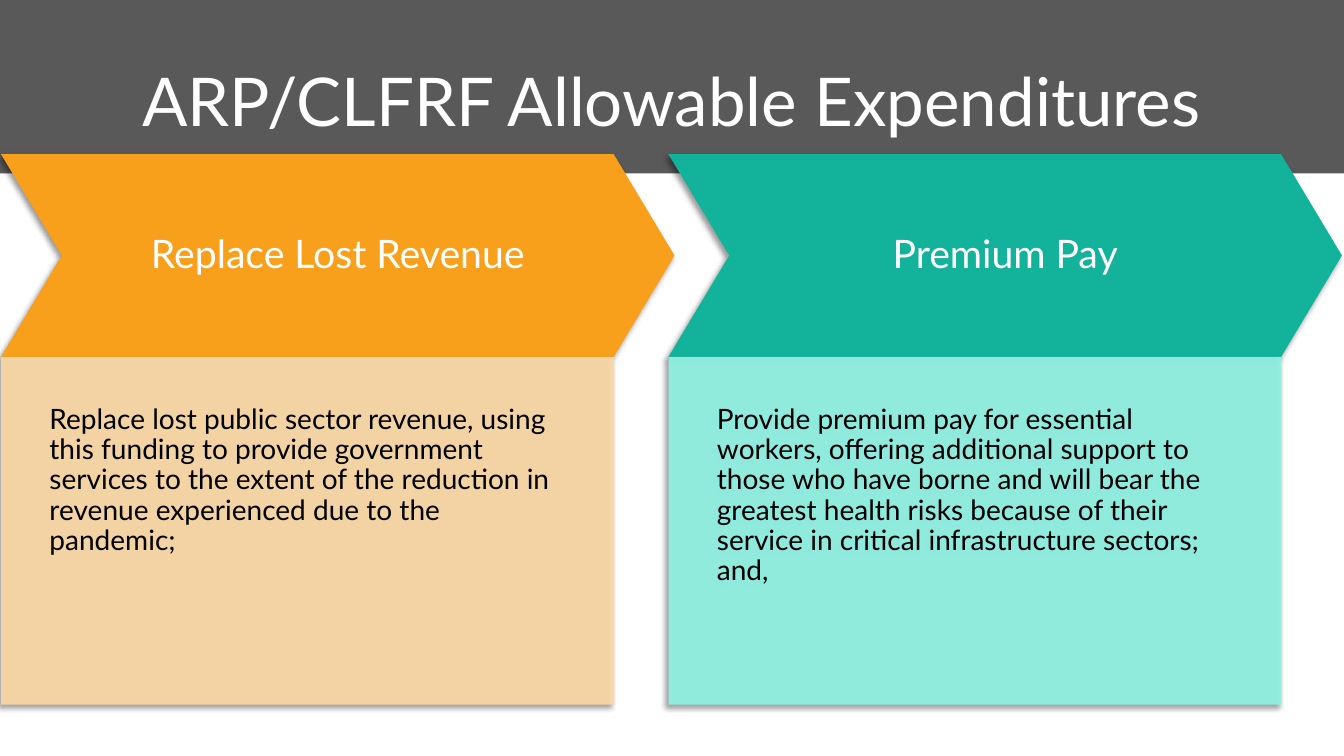
import pptx
import pptx.dml.color
import pptx.enum.shapes
import pptx.enum.text
import pptx.oxml
import pptx.oxml.ns
import pptx.util

SHAPE = pptx.enum.shapes.MSO_SHAPE
ALIGN = pptx.enum.text.PP_ALIGN
ANCHOR = pptx.enum.text.MSO_ANCHOR

EXPENDITURES = [
    ("Replace Lost Revenue", "F8A01B", "FCD9A4",
     "Replace lost public sector revenue, using this funding to provide "
     "government services to the extent of the reduction in revenue "
     "experienced due to the pandemic;"),
    ("Premium Pay", "13B39B", "8EF3E4",
     "Provide premium pay for essential workers, offering additional support "
     "to those who have borne and will bear the greatest health risks because "
     "of their service in critical infrastructure sectors; and,"),
]

SHADOW = (
    f'<a:effectLst {pptx.oxml.ns.nsdecls("a")}>'
    '<a:outerShdw blurRad="50800" dist="38100" dir="8100000" algn="tr" rotWithShape="0">'
    '<a:srgbClr val="000000"><a:alpha val="40000"/></a:srgbClr>'
    '</a:outerShdw></a:effectLst>'
)


def rgb(value):
    return pptx.dml.color.RGBColor.from_string(value)


class SlideBuilder:
    """Places elements on a slide; lengths are percentages of its size."""

    font = "Lato"

    def __init__(self, deck):
        self.deck = deck
        self.slide = deck.slides.add_slide(deck.slide_layouts.get_by_name("Title Only"))

    def area(self, left, top, width, height):
        across, down = self.deck.slide_width / 100, self.deck.slide_height / 100
        return [round(length) for length in
                (left * across, top * down, width * across, height * down)]

    def set_text(self, shape, text, size, color, align, anchor, insets, spacing=None):
        """Fill a shape with one paragraph; insets are inches: left, top, right, bottom."""
        frame = shape.text_frame
        frame.word_wrap = True
        frame.auto_size = pptx.enum.text.MSO_AUTO_SIZE.NONE
        frame.vertical_anchor = anchor
        (frame.margin_left, frame.margin_top,
         frame.margin_right, frame.margin_bottom) = map(pptx.util.Inches, insets)
        para = frame.paragraphs[0]
        para.alignment = align
        para.line_spacing = spacing
        run = para.add_run()
        run.text = text
        run.font.name = self.font
        run.font.size = pptx.util.Pt(size)
        run.font.color.rgb = rgb(color)

    def title(self, text, area):
        title = self.slide.shapes.title
        title.left, title.top, title.width, title.height = self.area(*area)
        self.set_text(title, text, 48, "FFFFFF", ALIGN.CENTER, ANCHOR.MIDDLE,
                      (0, 0.07, 0, 0.07))

    def block(self, kind, area, color):
        shape = self.slide.shapes.add_shape(kind, *self.area(*area))
        shape.shadow.inherit = False
        shape.fill.solid()
        shape.fill.fore_color.rgb = rgb(color)
        shape.line.fill.background()
        return shape

    def band(self, area, color):
        """Draw a plain block behind the title."""
        band = self.block(SHAPE.RECTANGLE, area, color)
        self.slide.shapes.title.element.addprevious(band.element)

    def shadowed_block(self, kind, area, color):
        shape = self.block(kind, area, color)
        effects = shape.element.spPr.find(pptx.oxml.ns.qn("a:effectLst"))
        effects.getparent().replace(effects, pptx.oxml.parse_xml(SHADOW))
        return shape

    def chevron(self, text, area, color):
        shape = self.shadowed_block(SHAPE.CHEVRON, area, color)
        shape.adjustments[0] = 0.3
        self.set_text(shape, text, 28, "FFFFFF", ALIGN.CENTER, ANCHOR.MIDDLE,
                      (0.25,) * 4, 0.9)

    def panel(self, text, area, color):
        shape = self.shadowed_block(SHAPE.RECTANGLE, area, color)
        tint = shape.element.spPr.find(".//" + pptx.oxml.ns.qn("a:srgbClr"))
        tint.append(pptx.oxml.parse_xml(
            f'<a:alpha {pptx.oxml.ns.nsdecls("a")} val="90000"/>'))
        self.set_text(shape, text, 20, "000000", ALIGN.LEFT, ANCHOR.TOP,
                      (0.48, 0.48, 0.48, 0.96), 0.9)


def main():
    deck = pptx.Presentation()
    deck.slide_width = pptx.util.Inches(13.33)
    deck.slide_height = pptx.util.Inches(7.5)

    page = SlideBuilder(deck)
    page.band((0, 0, 100, 22.93), "595959")
    page.title("ARP/CLFRF Allowable Expenditures", (5.25, 4.93, 89.42, 16.53))

    first_left, column_step = 0.08, 49.66
    top, chevron_height, panel_height = 20.4, 26.8, 46
    for column, (heading, strong, pale, details) in enumerate(EXPENDITURES):
        left = first_left + column * column_step
        page.chevron(heading, (left, top, 50.11, chevron_height), strong)
        page.panel(details, (left, top + chevron_height, 45.61, panel_height), pale)

    deck.save("out.pptx")


if __name__ == "__main__":
    main()
